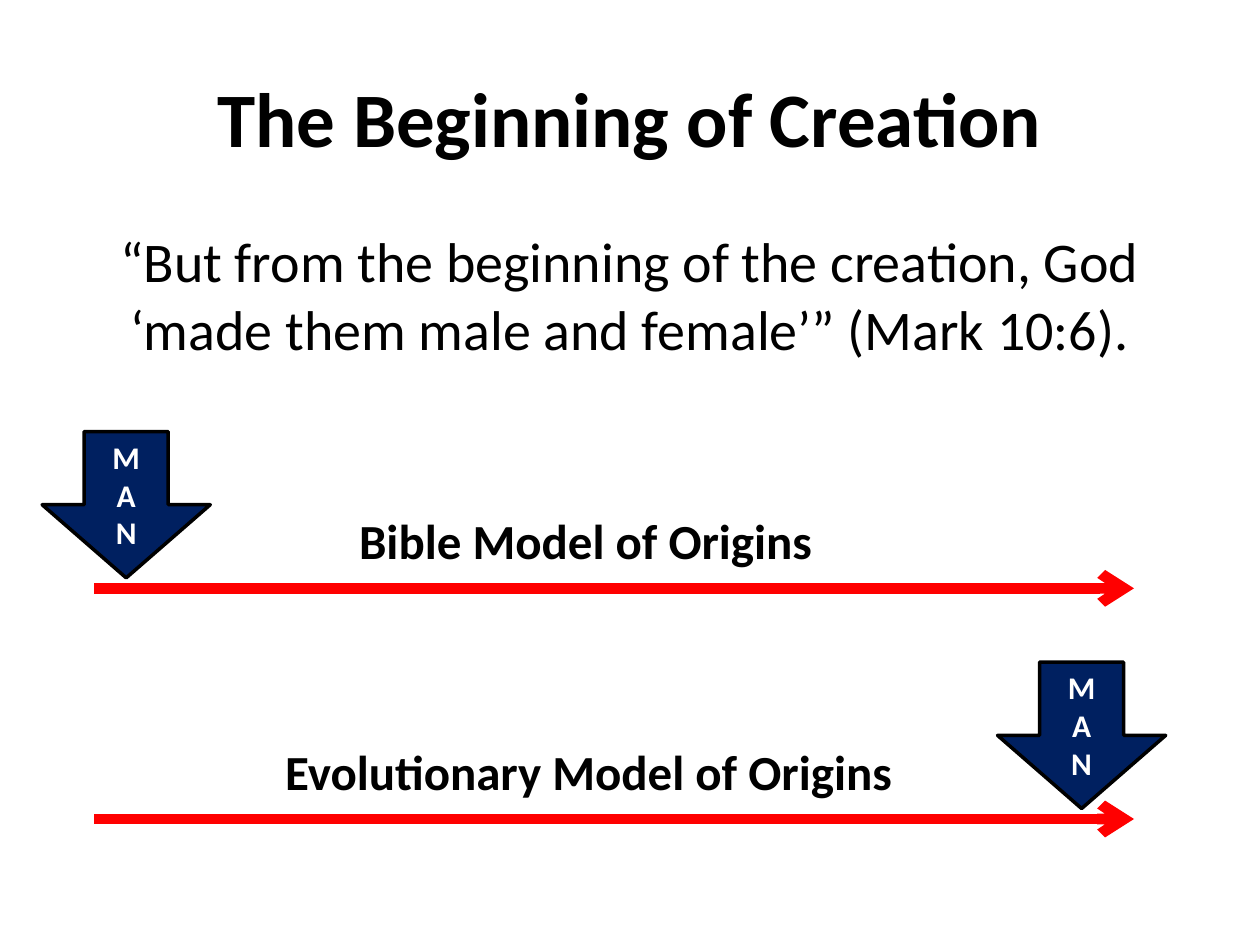
from dataclasses import dataclass

import pptx
import pptx.dml.color
import pptx.enum.shapes
import pptx.enum.text
import pptx.oxml.ns
import pptx.presentation
import pptx.slide
import pptx.util
from lxml import etree

Cm = pptx.util.Cm
Pt = pptx.util.Pt
Align = pptx.enum.text.PP_ALIGN
Anchor = pptx.enum.text.MSO_ANCHOR
Fit = pptx.enum.text.MSO_AUTO_SIZE

BLACK, WHITE, RED, NAVY = "000000", "FFFFFF", "FF0000", "002060"


@dataclass
class Box:
    left: float
    top: float
    width: float
    height: float


@dataclass
class Model:
    name: str
    axis: float    # height of the time line
    left: float    # left edge of the label
    width: float   # width of the label
    man: float     # left edge of the man marker


MODELS = [
    Model("Bible Model of Origins", 11.86, 6.99, 10.16, 0.85),
    Model("Evolutionary Model of Origins", 16.51, 5.5, 13.12, 20.11),
]


def color(code: str) -> pptx.dml.color.RGBColor:
    return pptx.dml.color.RGBColor.from_string(code)


def add_text(slide: pptx.slide.Slide, box: Box, text: str, size: int,
             bold: bool = True, tint: str = BLACK, align: Align = Align.CENTER,
             anchor: Anchor = Anchor.TOP, fit: Fit = Fit.NONE) -> None:
    shape = slide.shapes.add_textbox(
        Cm(box.left), Cm(box.top), Cm(box.width), Cm(box.height))
    frame = shape.text_frame
    frame.text = text
    frame.word_wrap = True
    frame.auto_size = fit
    frame.vertical_anchor = anchor
    line = frame.paragraphs[0]
    line.alignment = align
    font = line.runs[0].font
    font.name, font.size, font.bold = "Calibri", Pt(size), bold
    font.color.rgb = color(tint)


def add_axis(slide: pptx.slide.Slide, top: float) -> None:
    axis = slide.shapes.add_connector(
        pptx.enum.shapes.MSO_CONNECTOR.STRAIGHT,
        Cm(1.9), Cm(top), Cm(22.86), Cm(top))
    axis.line.color.rgb = color(RED)
    axis.line.width = Pt(6)
    qn = pptx.oxml.ns.qn
    etree.SubElement(axis.line._get_or_add_ln(), qn("a:tailEnd"), type="arrow")
    etree.SubElement(axis._element.spPr, qn("a:effectLst"))


def add_man(slide: pptx.slide.Slide, left: float, top: float) -> None:
    arrow = slide.shapes.add_shape(
        pptx.enum.shapes.MSO_SHAPE.DOWN_ARROW,
        Cm(left), Cm(top), Cm(3.39), Cm(2.95))
    arrow.shadow.inherit = False
    arrow.fill.solid()
    arrow.fill.fore_color.rgb = color(NAVY)
    arrow.line.color.rgb = color(BLACK)
    arrow.line.width = Pt(2)
    # The narrow box stacks the letters
    add_text(slide, Box(left + 1.06, top, 1.27, 2.57), "MAN", 18,
             tint=WHITE, fit=Fit.SHAPE_TO_FIT_TEXT)


def add_model(slide: pptx.slide.Slide, model: Model) -> None:
    add_axis(slide, model.axis)
    add_text(slide, Box(model.left, model.axis - 1.69, model.width, 1.45),
             model.name, 28, align=Align.LEFT, fit=Fit.SHAPE_TO_FIT_TEXT)
    add_man(slide, model.man, model.axis - 3.16)


def main() -> None:
    deck = pptx.Presentation()
    deck.slide_width, deck.slide_height = Cm(25.4), Cm(19.05)
    slide = deck.slides.add_slide(deck.slide_layouts[6])

    # Title and verse
    add_text(slide, Box(1.27, 0.76, 22.86, 3.18),
             "The Beginning of Creation", 44, anchor=Anchor.MIDDLE)
    add_text(slide, Box(1.27, 4.45, 22.86, 3.38),
             "“But from the beginning of the creation, God "
             "‘made them male and female’” (Mark 10:6).", 32, bold=False)

    # Time lines
    for model in MODELS:
        add_model(slide, model)

    deck.save("out.pptx")


if __name__ == "__main__":
    main()
